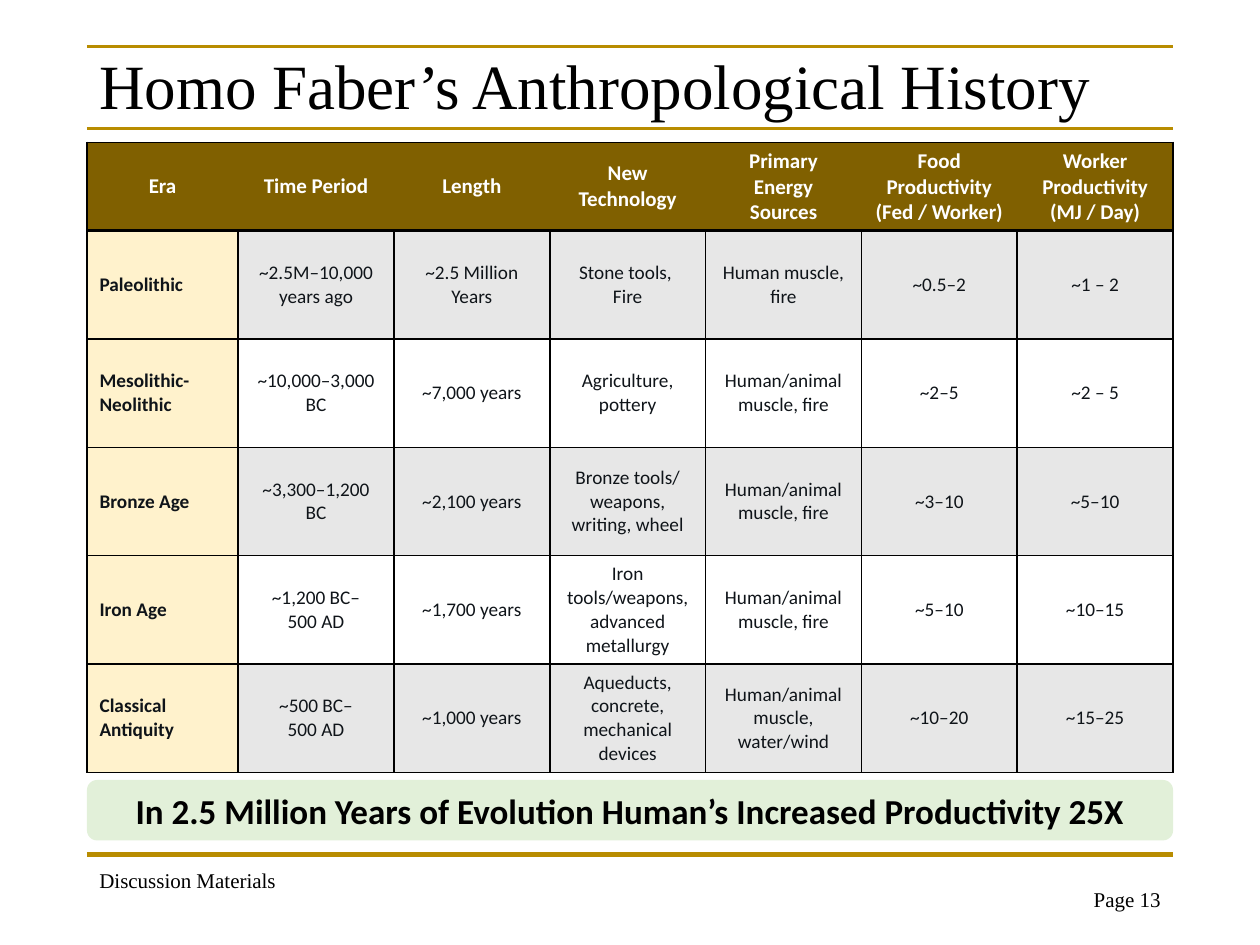
import pptx
import pptx.dml.color
import pptx.enum.shapes
import pptx.enum.text
import pptx.oxml
import pptx.oxml.ns
import pptx.util

# Content: a line break inside a cell starts a new paragraph
TITLE = "Homo Faber’s Anthropological History"
HEADERS = ["Era", "Time Period", "Length", "New Technology", "Primary Energy Sources",
           "Food Productivity\n(Fed / Worker)", "Worker Productivity\n(MJ / Day)"]
ERAS = [
    ["Paleolithic", "~2.5M–10,000 years ago", "~2.5 Million\nYears", "Stone tools, \nFire",
     "Human muscle, fire", "~0.5–2", "~1 – 2"],
    ["Mesolithic-Neolithic", "~10,000–3,000 BC", "~7,000 years", "Agriculture, pottery",
     "Human/animal muscle, fire", "~2–5", "~2 – 5"],
    ["Bronze Age", "~3,300–1,200 BC", "~2,100 years", "Bronze tools/ weapons, writing, wheel",
     "Human/animal muscle, fire", "~3–10", "~5–10"],
    ["Iron Age", "~1,200 BC–\n500 AD", "~1,700 years", "Iron tools/weapons, advanced metallurgy",
     "Human/animal muscle, fire", "~5–10", "~10–15"],
    ["Classical Antiquity", "~500 BC–\n500 AD", "~1,000 years",
     "Aqueducts, concrete, mechanical devices",
     "Human/animal muscle, water/wind", "~10–20", "~15–25"],
]
CONCLUSION = "In 2.5 Million Years of Evolution Human’s Increased Productivity 25X"
FOOTER = "Discussion Materials"
PAGE_LABEL = "Page 13"

THEME = {
    "serif": "Times New Roman", "sans": "Calibri",
    "rule": "B88C00", "header": "806000", "era": "FFF2CC", "bands": ["E7E7E7", "FFFFFF"],
    "conclusion": "E2F0D9", "black": "000000", "white": "FFFFFF", "body": "0F1419",
    "title_size": 36, "conclusion_size": 20, "header_size": 12, "body_size": 11, "footer_size": 12,
}

# Layout, in inches
WIDTH, HEIGHT = 10, 7.5
LEFT = 0.69
CONTENT = WIDTH - 2 * LEFT
TABLE_TOP, HEADER_HEIGHT, ROW_HEIGHT = 1.13, 0.7, 0.86
ERA_WIDTH = 1.2
RULES = [(0.37, 2), (1.02, 2), (6.78, 3)]

inches = pptx.util.Inches
ALIGN = pptx.enum.text.PP_ALIGN
MIDDLE = pptx.enum.text.MSO_ANCHOR.MIDDLE


def color(value):
    return pptx.dml.color.RGBColor.from_string(value)


def write(frame, text, font, size, ink, bold=False, align=ALIGN.LEFT):
    frame.word_wrap = True
    for index, line in enumerate(text.split("\n")):
        para = frame.add_paragraph() if index else frame.paragraphs[0]
        para.alignment = align
        span = para.add_run()
        span.text = line
        span.font.name, span.font.size, span.font.bold = font, pptx.util.Pt(size), bold
        span.font.color.rgb = color(ink)


def add_text(page, left, top, width, height, text, size, align=ALIGN.LEFT):
    box = page.shapes.add_textbox(inches(left), inches(top), inches(width), inches(height))
    write(box.text_frame, text, THEME["serif"], size, THEME["black"], align=align)
    return box


def add_rule(page, top, weight):
    rule = page.shapes.add_connector(pptx.enum.shapes.MSO_CONNECTOR.STRAIGHT, inches(LEFT),
                                     inches(top), inches(LEFT + CONTENT), inches(top))
    rule.line.color.rgb = color(THEME["rule"])
    rule.line.width = pptx.util.Pt(weight)
    rule._element.spPr.append(pptx.oxml.parse_xml(
        f'<a:effectLst {pptx.oxml.ns.nsdecls("a")}/>'))


def set_borders(cell, weights):
    """Weights of left, right, top and bottom in points; 0 hides the edge."""
    properties = cell._tc.get_or_add_tcPr()
    for index, (edge, weight) in enumerate(zip("LRTB", weights)):
        paint = (f'<a:solidFill><a:srgbClr val="{THEME["black"]}"/></a:solidFill>'
                 if weight else "<a:noFill/>")
        properties.insert(index, pptx.oxml.parse_xml(
            f'<a:ln{edge} {pptx.oxml.ns.nsdecls("a")} w="{pptx.util.Pt(weight)}">'
            f'{paint}</a:ln{edge}>'))


def add_era_table(page):
    rows, columns = len(ERAS) + 1, len(HEADERS)
    table = page.shapes.add_table(rows, columns, inches(LEFT), inches(TABLE_TOP), inches(CONTENT),
                                  inches(HEADER_HEIGHT + ROW_HEIGHT * len(ERAS))).table
    for index, column in enumerate(table.columns):
        column.width = inches((CONTENT - ERA_WIDTH) / (columns - 1) if index else ERA_WIDTH)
    for index, row in enumerate(table.rows):
        row.height = inches(ROW_HEIGHT if index else HEADER_HEIGHT)

    for r, texts in enumerate([HEADERS] + ERAS):
        for c, text in enumerate(texts):
            cell = table.cell(r, c)
            cell.vertical_anchor = MIDDLE
            if r == 0:
                fill, size, ink = THEME["header"], THEME["header_size"], THEME["white"]
                borders = (int(c == 0), int(c == columns - 1), 1, 2)
            else:
                fill = THEME["bands"][(r - 1) % 2] if c else THEME["era"]
                size, ink = THEME["body_size"], THEME["body"]
                borders = (1, 1, 2 if r == 1 else 1, 1)
            cell.fill.solid()
            cell.fill.fore_color.rgb = color(fill)
            write(cell.text_frame, text, THEME["sans"], size, ink, bold=r == 0 or c == 0,
                  align=ALIGN.LEFT if r and c == 0 else ALIGN.CENTER)
            set_borders(cell, borders)


def main():
    deck = pptx.Presentation()
    deck.slide_width, deck.slide_height = inches(WIDTH), inches(HEIGHT)
    page = deck.slides.add_slide(deck.slide_layouts[6])

    # Rules, footer and page number
    for top, weight in RULES:
        add_rule(page, top, weight)
    add_text(page, LEFT, 6.84, 4, 0.3, FOOTER, THEME["footer_size"])
    add_text(page, 6.84, 6.99, 2.47, 0.3, PAGE_LABEL, THEME["footer_size"], ALIGN.RIGHT)

    # Title
    title = add_text(page, LEFT, 0.4, CONTENT, 0.62, TITLE, THEME["title_size"])
    title.text_frame.vertical_anchor = MIDDLE
    title.text_frame.paragraphs[0].line_spacing = 0.9

    add_era_table(page)

    # Conclusion band
    band = page.shapes.add_shape(pptx.enum.shapes.MSO_SHAPE.ROUNDED_RECTANGLE,
                                 inches(LEFT), inches(6.19), inches(CONTENT), inches(0.48))
    band.shadow.inherit = False
    band.fill.solid()
    band.fill.fore_color.rgb = color(THEME["conclusion"])
    band.line.fill.background()
    band.text_frame.vertical_anchor = MIDDLE
    write(band.text_frame, CONCLUSION, THEME["sans"], THEME["conclusion_size"], THEME["black"],
          bold=True, align=ALIGN.CENTER)

    deck.save("out.pptx")


if __name__ == "__main__":
    main()
